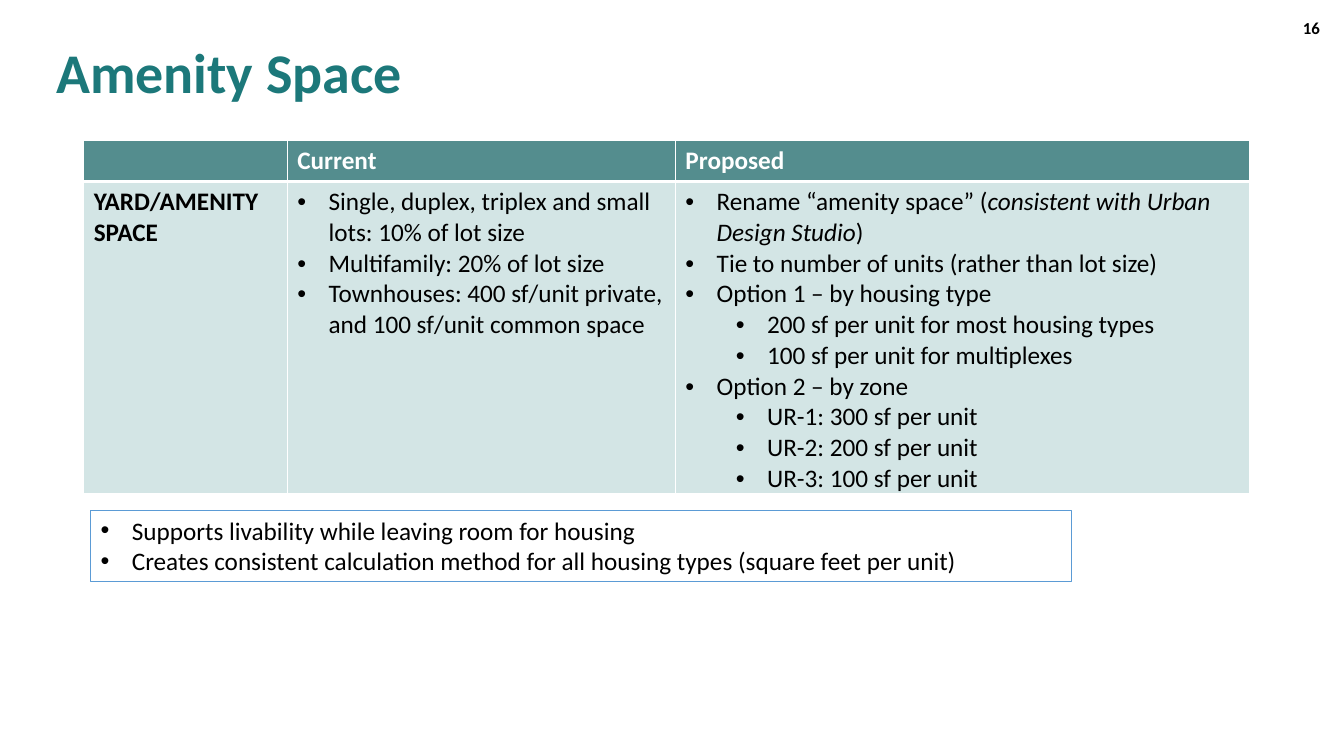
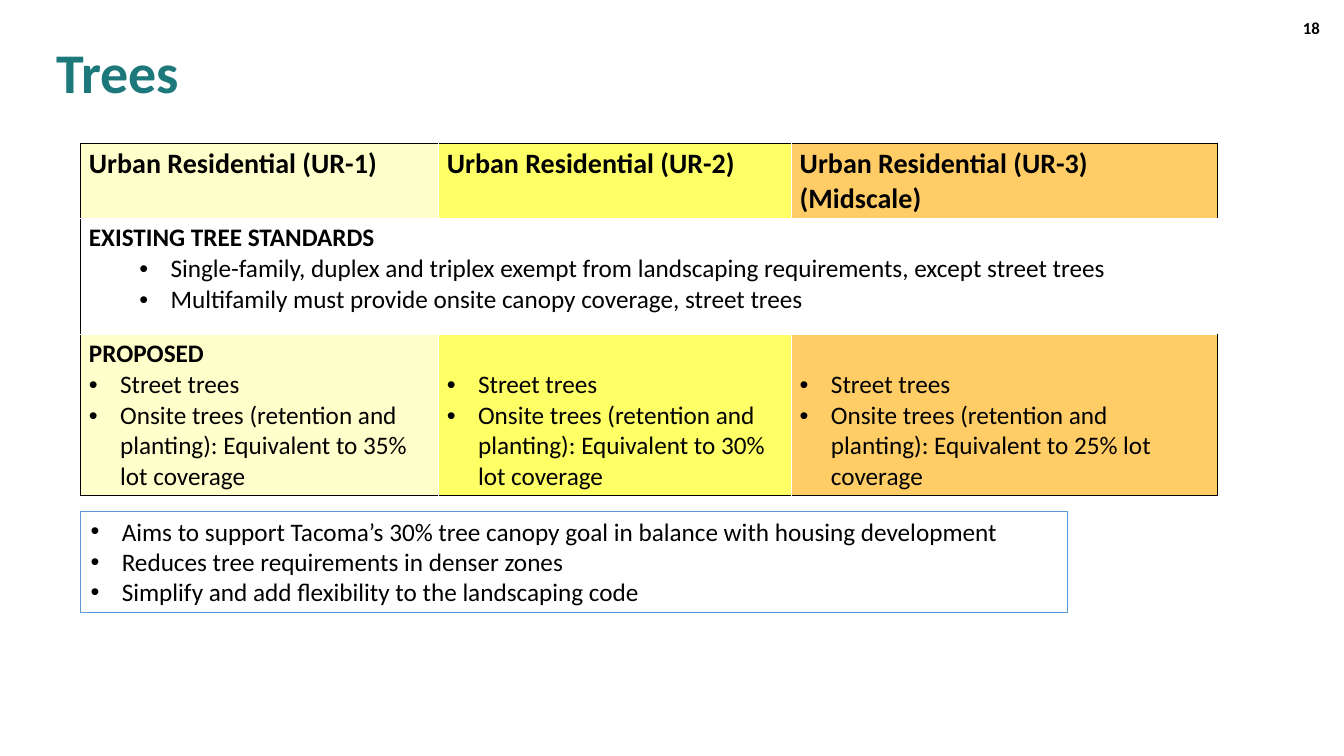
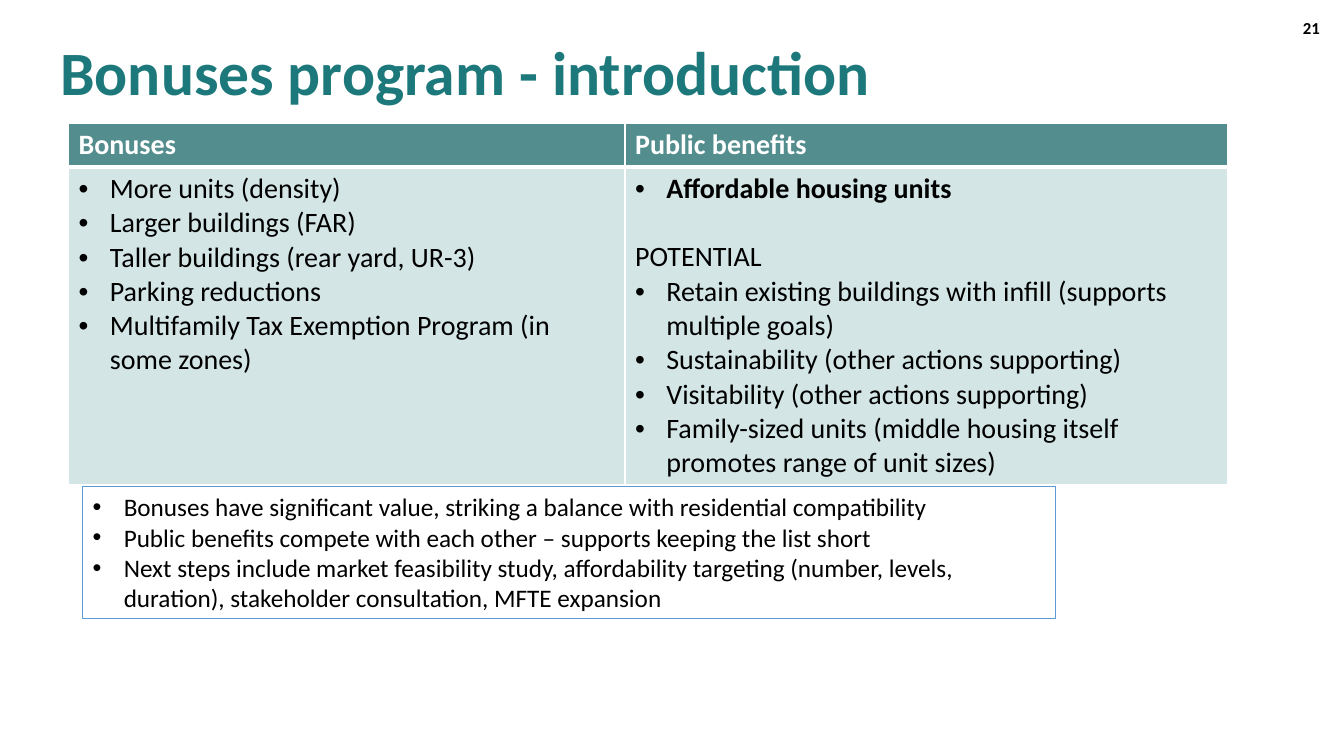
from dataclasses import dataclass
from typing import Any

from lxml.etree import SubElement
from pptx import Presentation
from pptx.dml.color import RGBColor
from pptx.enum.shapes import MSO_SHAPE
from pptx.enum.text import MSO_ANCHOR, PP_ALIGN
from pptx.oxml.ns import qn
from pptx.util import Inches, Pt


@dataclass(frozen=True)
class Theme:
    font: str = "Calibri"
    teal: str = "1C787A"
    head: str = "548D8E"
    pale: str = "D3E5E5"
    white: str = "FFFFFF"
    black: str = "000000"
    edge: str = "5B9BD5"
    cream: str = "FFFFCC"
    yellow: str = "FFFF66"
    orange: str = "FFCC66"
    title: int = 40
    large: int = 44
    body: int = 18
    lead: int = 20
    small: int = 12


@dataclass(frozen=True)
class Box:
    x: float
    y: float
    w: float
    h: float


@dataclass(frozen=True)
class Item:
    text: str
    depth: int = 0
    bold: bool = False
    gap: float = 0
    color: str = "000000"
    size: int = 18


@dataclass(frozen=True)
class Cell:
    items: list[Item]
    fill: str
    drop: float = 0
    span: int = 1


@dataclass(frozen=True)
class Grid:
    x: float
    y: float
    cols: list[float]
    rows: list[float]
    cells: list[list[Cell]]
    outer: str = "FFFFFF"
    rule: float = 1
    pad: tuple[float, float] = (0.75, 0.67)


@dataclass(frozen=True)
class Page:
    title: str
    number: int
    grid: Grid
    note: Box
    points: list[Item]
    size: int = 40
    left: float = 3.45


T = Theme()
WIDTH, HEIGHT = Inches(13.33), Inches(7.5)
HANG = Inches(0.31)
STEP = Inches(0.5)
LINE = 4.07


def across(share: float) -> int:
    return round(WIDTH * share / 100)


def down(share: float) -> int:
    return round(HEIGHT * share / 100)


def place(box: Box) -> tuple[int, int, int, int]:
    return across(box.x), down(box.y), across(box.w), down(box.h)


def style(target: Any, values: dict[str, Any]) -> None:
    for name, value in values.items():
        setattr(target, name, value)


def bullet(para: Any, depth: int) -> None:
    para.level = depth - 1
    props = para._p.get_or_add_pPr()
    props.set("marL", str(HANG + STEP * (depth - 1)))
    props.set("indent", str(-HANG))
    SubElement(props, qn("a:buFont"), typeface="Arial")
    SubElement(props, qn("a:buChar"), char="•")


def write(frame: Any, items: list[Item], **layout: Any) -> None:
    frame.word_wrap = True
    for at, item in enumerate(items):
        para = frame.add_paragraph() if at else frame.paragraphs[0]
        style(para, {"alignment": PP_ALIGN.LEFT, **layout})
        if item.gap:
            para.space_before = Pt(item.gap)
        if item.depth:
            bullet(para, item.depth)
        for part, text in enumerate(item.text.split("_")):
            run = para.add_run()
            run.text = text
            style(run.font, {"name": T.font, "size": Pt(item.size),
                             "bold": item.bold, "italic": part % 2 == 1})
            run.font.color.rgb = RGBColor.from_string(item.color)


def label(slide: Any, box: Box, item: Item, **layout: Any) -> None:
    frame = slide.shapes.add_textbox(*place(box)).text_frame
    frame.vertical_anchor = MSO_ANCHOR.MIDDLE
    write(frame, [item], **layout)


def border(cell: Any, side: str, color: str, width: float) -> None:
    line = SubElement(cell._tc.get_or_add_tcPr(), qn(f"a:ln{side}"), w=str(Pt(width)))
    SubElement(SubElement(line, qn("a:solidFill")), qn("a:srgbClr"), val=color)


def frame_cell(cell: Any, grid: Grid, row: int, col: int) -> None:
    ends = {"L": col == 0, "R": col == len(grid.cols) - 1,
            "T": row == 0, "B": row == len(grid.rows) - 1}
    for side, end in ends.items():
        seam = (row, side) in ((0, "B"), (1, "T"))
        border(cell, side, grid.outer if end else T.white, grid.rule if seam else 1)


def draw_grid(slide: Any, grid: Grid) -> None:
    box = Box(grid.x, grid.y, sum(grid.cols), sum(grid.rows))
    table = slide.shapes.add_table(len(grid.rows), len(grid.cols), *place(box)).table
    table.horz_banding = False
    for col, share in enumerate(grid.cols):
        table.columns[col].width = across(share)
    for row, share in enumerate(grid.rows):
        table.rows[row].height = down(share)
        for col in range(len(grid.cols)):
            frame_cell(table.cell(row, col), grid, row, col)
    side, top = grid.pad
    for row, line in enumerate(grid.cells):
        for col, data in enumerate(line):
            cell = table.cell(row, col)
            if data.span > 1:
                cell.merge(table.cell(row, col + data.span - 1))
            style(cell, {"margin_left": across(side), "margin_right": across(side),
                         "margin_top": down(top + data.drop), "margin_bottom": down(top)})
            cell.fill.solid()
            cell.fill.fore_color.rgb = RGBColor.from_string(data.fill)
            write(cell.text_frame, data.items)


def draw_note(slide: Any, box: Box, points: list[Item]) -> None:
    note = slide.shapes.add_shape(MSO_SHAPE.RECTANGLE, *place(box))
    note.shadow.inherit = False
    note.fill.background()
    note.line.color.rgb = RGBColor.from_string(T.edge)
    note.line.width = Pt(0.75)
    note.text_frame.vertical_anchor = MSO_ANCHOR.TOP
    write(note.text_frame, points)


def draw_page(deck: Any, page: Page) -> None:
    slide = deck.slides.add_slide(deck.slide_layouts[6])
    label(slide, Box(page.left, 0.27, 86.27, 19.33),
          Item(page.title, bold=True, color=T.teal, size=page.size), line_spacing=0.9)
    label(slide, Box(76.44, 1.07, 22.51, 5.33),
          Item(str(page.number), bold=True, size=T.small), alignment=PP_ALIGN.RIGHT)
    draw_grid(slide, page.grid)
    draw_note(slide, page.note, page.points)


def dots(*texts: str, depth: int = 1, size: int = T.body) -> list[Item]:
    return [Item(text, depth, size=size) for text in texts]


def heads(*texts: str, size: int = T.body) -> list[Cell]:
    return [Cell([Item(text, bold=True, color=T.white, size=size)] if text else [], T.head)
            for text in texts]


ZONES = [
    ("Urban Residential (UR-1)", T.cream, 35),
    ("Urban Residential (UR-2)", T.yellow, 30),
    ("Urban Residential (UR-3) (Midscale)", T.orange, 25),
]


def zone(at: int, fill: str, share: int) -> Cell:
    lead = [] if at else [Item("PROPOSED", bold=True)]
    points = dots("Street trees",
                  f"Onsite trees (retention and planting): Equivalent to {share}% lot coverage")
    return Cell(lead + points, fill, drop=LINE if at else 0)


AMENITY = Grid(6.23, 18.53, [15.15, 28.88, 42.69], [5.47, 41.33], [
    heads("", "Current", "Proposed"),
    [
        Cell([Item("YARD/AMENITY SPACE", bold=True)], T.pale),
        Cell(dots("Single, duplex, triplex and small lots: 10% of lot size",
                  "Multifamily: 20% of lot size",
                  "Townhouses: 400 sf/unit private, and 100 sf/unit common space"), T.pale),
        Cell(dots("Rename “amenity space” (_consistent with Urban Design Studio_)",
                  "Tie to number of units (rather than lot size)",
                  "Option 1 – by housing type")
             + dots("200 sf per unit for most housing types",
                    "100 sf per unit for multiplexes", depth=2)
             + dots("Option 2 – by zone")
             + dots("UR-1: 300 sf per unit", "UR-2: 200 sf per unit",
                    "UR-3: 100 sf per unit", depth=2), T.pale),
    ],
], rule=3)

TREES = Grid(6, 18.93, [26.63, 26.26, 31.73], [10, 15.33, 21.3], [
    [Cell([Item(name, bold=True, size=T.lead)], fill) for name, fill, _ in ZONES],
    [Cell([Item("EXISTING TREE STANDARDS", bold=True)]
          + dots("Single-family, duplex and triplex exempt from landscaping requirements, "
                 "except street trees",
                 "Multifamily must provide onsite canopy coverage, street trees", depth=2),
          T.white, span=3)],
    [zone(at, fill, share) for at, (_, fill, share) in enumerate(ZONES)],
], outer=T.black, pad=(0.62, 0.53))

BONUS = Grid(5.1, 16.27, [41.41, 44.86], [5.73, 42], [
    heads("Bonuses", "Public benefits", size=T.lead),
    [
        Cell(dots("More units (density)", "Larger buildings (FAR)",
                  "Taller buildings (rear yard, UR-3)", "Parking reductions",
                  "Multifamily Tax Exemption Program (in some zones)", size=T.lead), T.pale),
        Cell([Item("Affordable housing units", 1, bold=True, size=T.lead),
              Item("POTENTIAL", gap=24.4, size=T.lead)]
             + dots("Retain existing buildings with infill (supports multiple goals)",
                    "Sustainability (other actions supporting)",
                    "Visitability (other actions supporting)",
                    "Family-sized units (middle housing itself promotes range of unit sizes)",
                    size=T.lead), T.pale),
    ],
], rule=3)

PAGES = [
    Page("Amenity Space", 16, AMENITY, Box(6.75, 67.47, 72.99, 9.47),
         dots("Supports livability while leaving room for housing",
              "Creates consistent calculation method for all housing types "
              "(square feet per unit)")),
    Page("Trees", 18, TREES, Box(6, 67.6, 73.44, 13.47),
         dots("Aims to support Tacoma’s 30% tree canopy goal in balance with housing development",
              "Reduces tree requirements in denser zones",
              "Simplify and add flexibility to the landscaping code")),
    Page("Bonuses program - introduction", 21, BONUS, Box(6.15, 64.4, 72.39, 17.47),
         dots("Bonuses have significant value, striking a balance with residential compatibility",
              "Public benefits compete with each other – supports keeping the list short",
              "Next steps include market feasibility study, affordability targeting "
              "(number, levels, duration), stakeholder consultation, MFTE expansion"),
         size=T.large, left=3.75),
]


def main() -> None:
    deck = Presentation()
    style(deck, {"slide_width": WIDTH, "slide_height": HEIGHT})
    for page in PAGES:
        draw_page(deck, page)
    deck.save("out.pptx")


if __name__ == "__main__":
    main()
